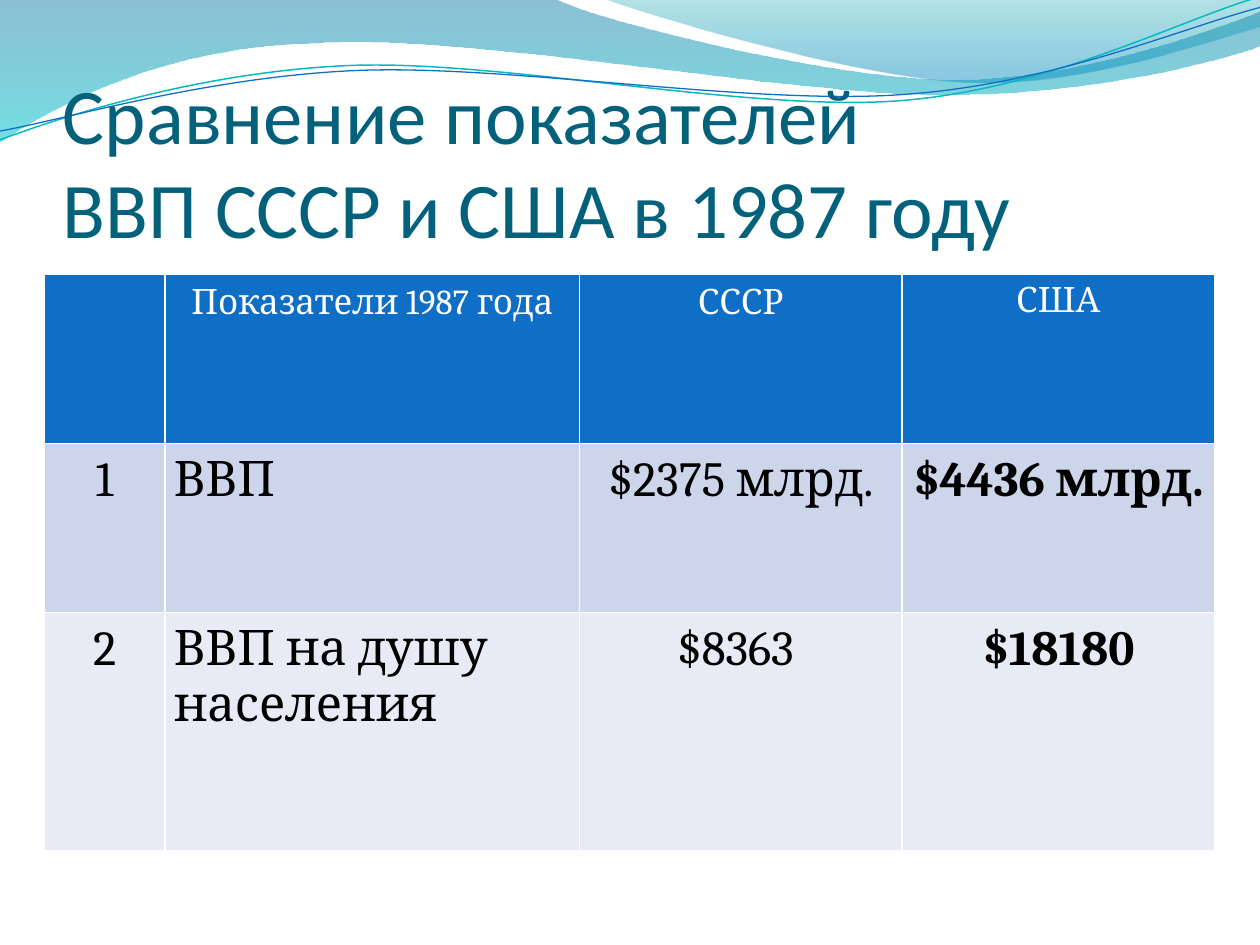
"""Build a slide comparing the 1987 GDP of the USSR and the USA in a table under a wave banner."""
import math

import pptx
import pptx.dml.color
import pptx.enum.text
import pptx.oxml
import pptx.oxml.ns
import pptx.util

COLORS = {
    "title": "04617B", "header": "0F6FC6", "odd": "CCD5EA", "even": "E7EBF5",
    "white": "FFFFFF", "black": "000000", "teal": "0AB8BF", "blue": "0F6FC6",
    "deep": "0074A1", "cyan": "00C6CF", "sea": "00A1A9", "sky": "008BBF",
}
WIDTH, HEIGHT = 10, 7.5
TITLE = "Сравнение показателей \vВВП СССР и США в 1987 году"
ROWS = [
    ["", "Показатели 1987 года", "СССР", "США"],
    ["1", "ВВП", "$2375 млрд.", "$4436 млрд."],
    ["2", "ВВП на душу населения", "$8363 ", "$18180"],
]
COLUMN_WIDTHS = [0.96, 3.29, 2.56, 2.48]
ROW_HEIGHTS = [1.34, 1.34, 1.89]
ROW_FILLS = ["header", "odd", "even"]
BANDS = [
    {"start": (0, 0),
     "segments": [[(4.4, -0.01)],
                  [(4.76, 0.17), (6.64, 0.63), (7.58, 0.63)],
                  [(8.53, 0.63), (9.58, 0.26), (10, 0.09)], [(10.01, 0.36)],
                  [(9.83, 0.44), (8.7, 0.76), (7.46, 0.75)],
                  [(6.22, 0.75), (3.82, 0.28), (2.57, 0.34)],
                  [(1.29, 0.36), (0.46, 0.83), (-0.01, 1.13)], [(0, 0)]],
     "stops": [(0, "deep", 45), (100, "cyan", 55)]},
    {"start": (4.79, -0.01),
     "segments": [[(5.09, 0.11), (6.82, 0.62), (7.69, 0.65)],
                  [(8.56, 0.69), (9.61, 0.32), (10, 0.21)], [(10, 0)], [(4.79, -0.01)]],
     "stops": [(0, "sea", 30), (80, "sky", 45)]},
]
STRANDS = [
    {"start": (0, 1.11),
     "segments": [[(0.48, 0.93), (1.58, 0.57), (2.77, 0.52)],
                  [(3.95, 0.47), (5.93, 0.89), (7.13, 0.8)],
                  [(8.33, 0.71), (9.38, 0.15), (9.98, -0.02)]],
     "center": (4.99, 0.58), "color": "teal", "width": 0.85},
    {"start": (0, 1.04),
     "segments": [[(0.47, 0.96), (1.64, 0.61), (2.83, 0.56)],
                  [(4.03, 0.51), (5.97, 0.84), (7.17, 0.75)],
                  [(8.36, 0.67), (9.41, 0.21), (10, 0.06)]],
     "center": (5, 0.59), "color": "blue", "width": 0.75},
]
STRAND_ROTATION = 357.3


def rgb(name):
    return pptx.dml.color.RGBColor.from_string(COLORS[name])


def set_format(target, values):
    for name, value in values.items():
        setattr(target, name, value)


def set_font(paragraph, size, face, color, bold=False):
    for run in paragraph.runs:
        set_format(run.font, {"size": pptx.util.Pt(size), "name": face, "bold": bold})
        run.font.color.rgb = rgb(color)


def turn(point, center, degrees):
    angle = math.radians(degrees)
    x, y = point[0] - center[0], point[1] - center[1]
    return (center[0] + x * math.cos(angle) - y * math.sin(angle),
            center[1] + x * math.sin(angle) + y * math.cos(angle))


def add_curve(shapes, start, segments, closed):
    points = [tuple(map(pptx.util.Inches, point))
              for point in [start, *(point for segment in segments for point in segment)]]
    builder = shapes.build_freeform(*points[0])
    builder.add_line_segments(points[1:], close=closed)
    shape = builder.convert_to_shape()
    shape.shadow.inherit = False
    steps = iter(list(shape.element.iter(pptx.oxml.ns.qn("a:lnTo"))))
    for segment in segments:
        parts = [next(steps) for _ in segment]
        if len(parts) == 3:
            bezier = pptx.oxml.parse_xml(f'<a:cubicBezTo {pptx.oxml.ns.nsdecls("a")}/>')
            parts[0].addprevious(bezier)
            for part in parts:
                bezier.append(part[0])
                part.getparent().remove(part)
    return shape


def add_band(slide, band):
    shape = add_curve(slide.shapes, band["start"], band["segments"], True)
    shape.line.fill.background()
    marks = "".join(
        f'<a:gs pos="{position * 1000}"><a:srgbClr val="{COLORS[color]}">'
        f'<a:alpha val="{alpha * 1000}"/></a:srgbClr></a:gs>'
        for position, color, alpha in band["stops"])
    geometry = shape.element.spPr.find(pptx.oxml.ns.qn("a:custGeom"))
    geometry.addnext(pptx.oxml.parse_xml(
        f'<a:gradFill {pptx.oxml.ns.nsdecls("a")} rotWithShape="1"><a:gsLst>{marks}</a:gsLst>'
        '<a:lin ang="5400000" scaled="0"/></a:gradFill>'))


def add_strand(group, strand):
    def level(point):
        return turn(point, strand["center"], 360 - STRAND_ROTATION)

    segments = [[level(point) for point in segment] for segment in strand["segments"]]
    shape = add_curve(group.shapes, level(strand["start"]), segments, False)
    shape.rotation = STRAND_ROTATION
    shape.fill.background()
    shape.line.color.rgb = rgb(strand["color"])
    shape.line.width = pptx.util.Pt(strand["width"])


def add_title(slide):
    box = slide.shapes.add_textbox(*map(pptx.util.Inches, (0.5, 0.77, 0.9 * WIDTH, 1.25)))
    frame = box.text_frame
    set_format(frame, {
        "word_wrap": True, "vertical_anchor": pptx.enum.text.MSO_ANCHOR.BOTTOM,
        "margin_left": 0, "margin_right": 0, "margin_bottom": 0,
        "margin_top": pptx.util.Inches(0.05)})
    frame.text = TITLE
    set_font(frame.paragraphs[0], 45, "Calibri", "title")


def fill_cell(cell, text, row, column):
    header = row == 0
    cell.fill.solid()
    cell.fill.fore_color.rgb = rgb(ROW_FILLS[row])
    if text and (row, column) != (0, 3):
        margin = pptx.util.Inches(0.07)
        set_format(cell, {f"margin_{side}": margin for side in ("left", "top", "right", "bottom")})
    cell.text = text
    paragraph = cell.text_frame.paragraphs[0]
    if header or column != 1:
        paragraph.alignment = pptx.enum.text.PP_ALIGN.CENTER
    set_font(paragraph, 20 if header else 28, "Cambria",
             "white" if header else "black", column == 3 and not header)


def add_comparison(slide):
    area = (0.35, 2.18, sum(COLUMN_WIDTHS), sum(ROW_HEIGHTS))
    table = slide.shapes.add_table(len(ROWS), len(COLUMN_WIDTHS),
                                   *map(pptx.util.Inches, area)).table
    for column, width in zip(table.columns, COLUMN_WIDTHS):
        column.width = pptx.util.Inches(width)
    for row, height in zip(table.rows, ROW_HEIGHTS):
        row.height = pptx.util.Inches(height)
    for row, texts in enumerate(ROWS):
        for column, text in enumerate(texts):
            fill_cell(table.cell(row, column), text, row, column)


def main():
    presentation = pptx.Presentation()
    set_format(presentation, {"slide_width": pptx.util.Inches(WIDTH),
                              "slide_height": pptx.util.Inches(HEIGHT)})
    slide = presentation.slides.add_slide(presentation.slide_layouts[6])
    for band in BANDS:
        add_band(slide, band)
    strands = slide.shapes.add_group_shape()
    for strand in STRANDS:
        add_strand(strands, strand)
    add_title(slide)
    add_comparison(slide)
    presentation.save("out.pptx")


if __name__ == "__main__":
    main()
